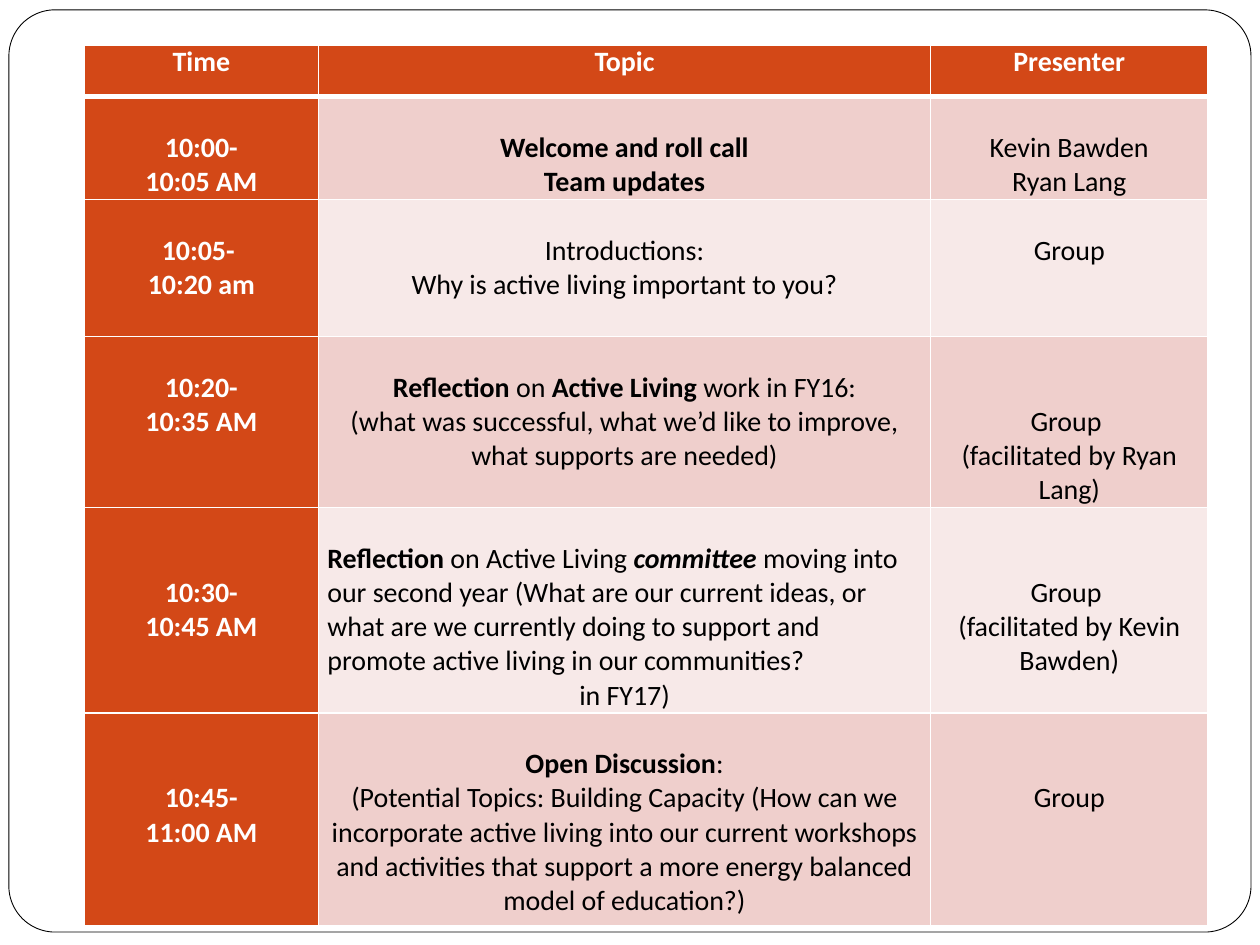
from lxml.etree import SubElement
from pptx import Presentation
from pptx.dml.color import RGBColor
from pptx.enum.shapes import MSO_SHAPE
from pptx.enum.text import PP_ALIGN
from pptx.oxml.ns import qn
from pptx.util import Cm, Pt

WHITE = RGBColor(0xFF, 0xFF, 0xFF)
BLACK = RGBColor(0x00, 0x00, 0x00)
ORANGE = RGBColor(0xD3, 0x48, 0x17)
ROSE = RGBColor(0xEF, 0xCF, 0xCC)
PALE_ROSE = RGBColor(0xF7, 0xE9, 0xE8)

LINE_HEIGHT = 0.69
COLUMN_WIDTHS = [4.72, 12.34, 5.59]
ROW_HEIGHTS = [1.04, 2.07, 2.76, 3.45, 4.14, 4.29]
BLANK_LINES = [(0, 0, 0), (1, 1, 1), (1, 1, 1), (1, 1, 2), (2, 1, 2), (2, 1, 2)]

AGENDA = [
    (["Time"], ["Topic"], ["Presenter"]),
    (
        ["10:00-", "10:05 AM"],
        [[("Welcome and roll call", "b")], [("Team updates", "b")]],
        ["Kevin Bawden", "Ryan Lang"],
    ),
    (
        ["10:05- ", "10:20 am"],
        ["Introductions:", "Why is active living important to you?"],
        ["Group"],
    ),
    (
        ["10:20-", "10:35 AM"],
        [
            [("Reflection", "b"), (" on ", ""), ("Active Living", "b"), (" work in FY16:", "")],
            "(what was successful, what we’d like to improve, what supports are needed)",
        ],
        ["Group ", "(facilitated by Ryan Lang)"],
    ),
    (
        ["10:30-", "10:45 AM"],
        [
            [
                ("Reflection ", "b"),
                ("on Active Living ", ""),
                ("committee", "bi"),
                (" moving into our second year (What are our current ideas, or what are we "
                 "currently doing to support and promote active living in our communities?", ""),
            ],
            "in FY17)",
        ],
        ["Group ", "(facilitated by Kevin Bawden)"],
    ),
    (
        ["10:45-", "11:00 AM"],
        [
            [("Open Discussion", "b"), (":", "")],
            "(Potential Topics: Building Capacity (How can we incorporate active living into our "
            "current workshops and activities that support a more energy balanced model of education?)",
        ],
        ["Group"],
    ),
]


def add_text(paragraph, text, color=BLACK, bold=False, italic=False, size=16):
    run = paragraph.add_run()
    run.text = text
    run.font.name = "Calibri"
    run.font.size = Pt(size)
    run.font.bold = bold
    run.font.italic = italic
    run.font.color.rgb = color


def add_borders(cell, widths):
    properties = cell._tc.get_or_add_tcPr()
    for position, (side, width) in enumerate(widths.items()):
        line = SubElement(properties, qn(f"a:ln{side}"), w=str(Pt(width)))
        fill = SubElement(line, qn("a:solidFill"))
        SubElement(fill, qn("a:srgbClr"), val=str(WHITE))
        properties.insert(position, line)


presentation = Presentation()
presentation.slide_width = Cm(25.4)
presentation.slide_height = Cm(19.05)
slide = presentation.slides.add_slide(presentation.slide_layouts[6])

frame = slide.shapes.add_shape(MSO_SHAPE.ROUNDED_RECTANGLE, Cm(0.18), Cm(0.2), Cm(25.04), Cm(18.59))
frame.adjustments[0] = 0.05
frame.shadow.inherit = False
frame.fill.solid()
frame.fill.fore_color.rgb = WHITE
frame.line.color.rgb = BLACK
frame.line.width = Pt(0.5)

table = slide.shapes.add_table(
    len(ROW_HEIGHTS), len(COLUMN_WIDTHS), Cm(1.7), Cm(0.91),
    Cm(sum(COLUMN_WIDTHS)), Cm(sum(ROW_HEIGHTS)),
).table
for column, width in zip(table.columns, COLUMN_WIDTHS):
    column.width = Cm(width)
for row, height in zip(table.rows, ROW_HEIGHTS):
    row.height = Cm(height)

for row_index, (entries, blanks) in enumerate(zip(AGENDA, BLANK_LINES)):
    for column_index, (lines, blank) in enumerate(zip(entries, blanks)):
        cell = table.cell(row_index, column_index)
        heading = row_index == 0 or column_index == 0
        cell.fill.solid()
        cell.fill.fore_color.rgb = ORANGE if heading else ROSE if row_index % 2 else PALE_ROSE
        cell.margin_left = cell.margin_right = Cm(0.18)
        cell.margin_top = Cm(blank * LINE_HEIGHT)
        cell.margin_bottom = Cm(0)
        add_borders(cell, {
            "L": 1, "R": 1,
            "T": 3 if row_index == 1 else 1,
            "B": 3 if row_index == 0 else 1,
        })
        for line_index, line in enumerate(lines):
            text_frame = cell.text_frame
            paragraph = text_frame.add_paragraph() if line_index else text_frame.paragraphs[0]
            paragraph.alignment = PP_ALIGN.CENTER
            for text, style in [(line, "")] if isinstance(line, str) else line:
                add_text(
                    paragraph, text, color=WHITE if heading else BLACK,
                    bold=heading or "b" in style, italic="i" in style,
                )

table.cell(4, 1).text_frame.paragraphs[0].alignment = PP_ALIGN.LEFT

presentation.save("out.pptx")
